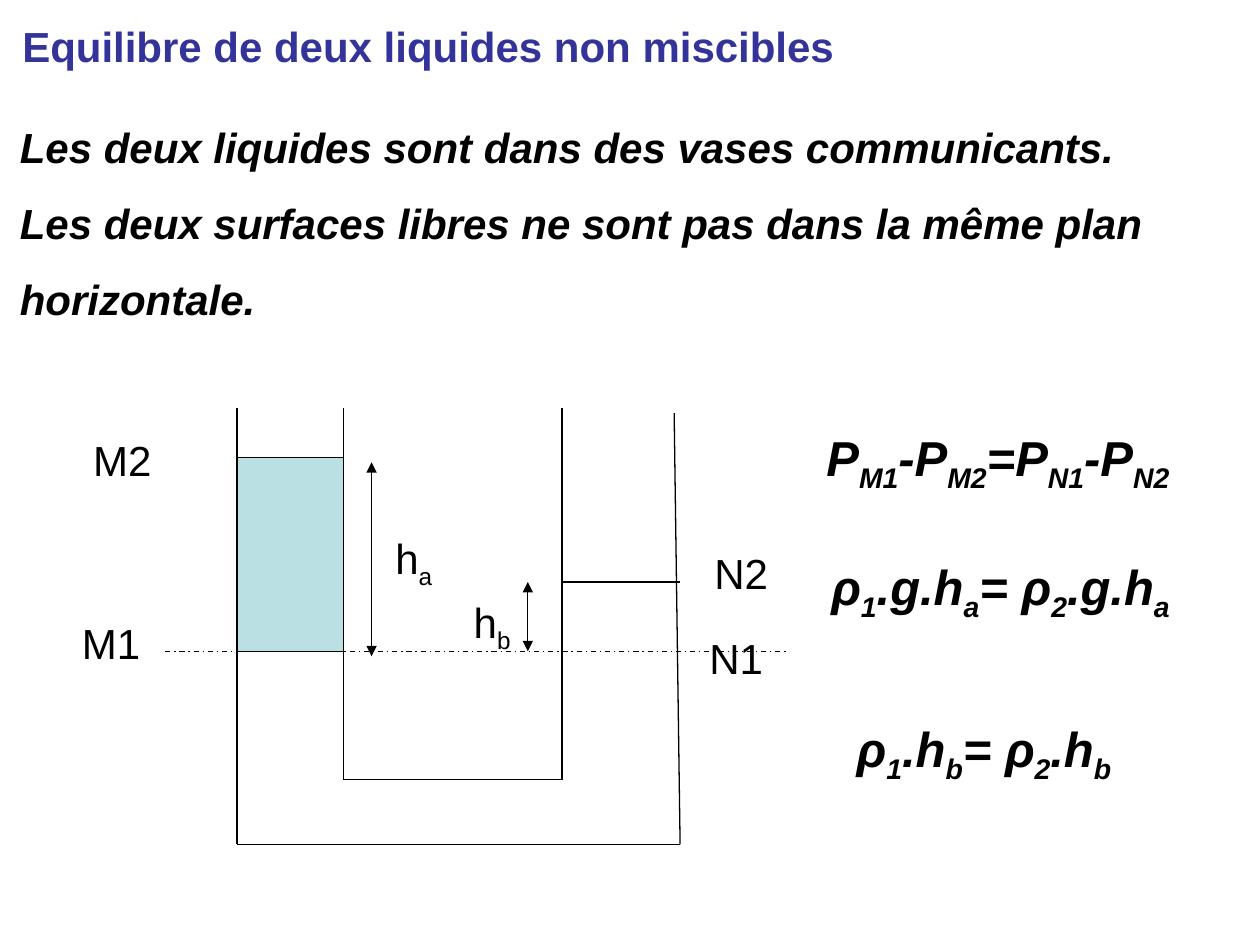
from dataclasses import dataclass

from lxml import etree
from pptx import Presentation
from pptx.dml.color import RGBColor
from pptx.enum.dml import MSO_LINE
from pptx.enum.shapes import MSO_CONNECTOR, MSO_SHAPE
from pptx.enum.text import MSO_ANCHOR
from pptx.oxml.ns import qn
from pptx.util import Cm, Pt

STRAIGHT = MSO_CONNECTOR.STRAIGHT
RECTANGLE = MSO_SHAPE.RECTANGLE
DASH_DOT = MSO_LINE.DASH_DOT
TOP, MIDDLE = MSO_ANCHOR.TOP, MSO_ANCHOR.MIDDLE

BLACK, TITLE_BLUE, LIQUID_BLUE = "000000", "333399", "BBE0E3"
FONT = "Arial"
LINE_WIDTH = Pt(0.75)

# Geometry of the U-shaped vessel, in centimetres
OUTER_LEFT, INNER_LEFT, INNER_RIGHT, OUTER_RIGHT = 4.78, 6.93, 11.33, 13.71
RIM, INNER_BOTTOM, OUTER_BOTTOM = 8.23, 15.72, 17.02
M2_LEVEL, N2_LEVEL, INTERFACE = 9.22, 11.73, 13.13


@dataclass
class Line:
    x1: float
    y1: float
    x2: float
    y2: float
    arrows: bool = False
    dashed: bool = False


@dataclass
class TextItem:
    """Text whose pieces between bars are alternately normal and subscript."""
    text: str
    left: float
    top: float
    width: float
    height: float
    size: int = 24
    color: str = BLACK
    bold: bool = False
    italic: bool = False
    anchor: MSO_ANCHOR = TOP
    spacing: float = 1.0


def formula(text: str, left: float, top: float, width: float) -> TextItem:
    return TextItem(text, left, top, width, 2.31, 28, BLACK, True, True, MIDDLE)


HEADINGS = [
    TextItem("Equilibre de deux liquides non miscibles", 0.2, 0.13, 17.3, 1.57,
             color=TITLE_BLUE, bold=True, anchor=MIDDLE),
    TextItem("Les deux liquides sont dans des vases communicants.\v"
             "Les deux surfaces libres ne sont pas dans la même plan horizontale.",
             0.15, 2.24, 25.4, 3.99, bold=True, italic=True, anchor=MIDDLE, spacing=1.5),
]

VESSEL_LINES = [
    Line(OUTER_LEFT, RIM, OUTER_LEFT, OUTER_BOTTOM),
    Line(INNER_LEFT, RIM, INNER_LEFT, INNER_BOTTOM),
    Line(INNER_RIGHT, RIM, INNER_RIGHT, INNER_BOTTOM),
    Line(13.59, 8.33, OUTER_RIGHT, OUTER_BOTTOM),
    Line(INNER_LEFT, INNER_BOTTOM, INNER_RIGHT, INNER_BOTTOM),
    Line(OUTER_LEFT, OUTER_BOTTOM, OUTER_RIGHT, OUTER_BOTTOM),
    Line(4.9, M2_LEVEL, INNER_LEFT, M2_LEVEL),
    Line(4.9, INTERFACE, INNER_LEFT, INTERFACE),
    Line(INNER_RIGHT, N2_LEVEL, OUTER_RIGHT, N2_LEVEL),
    Line(7.49, 9.32, 7.49, 13.23, arrows=True),
    Line(10.64, N2_LEVEL, 10.64, INTERFACE, arrows=True),
]
REFERENCE_LINE = Line(3.33, INTERFACE, 15.85, INTERFACE, dashed=True)

LABELS = [
    TextItem("M2", 1.63, 8.64, 1.71, 2.31),
    TextItem("M1", 1.4, 12.32, 1.71, 2.31),
    TextItem("N2", 14.15, 10.92, 1.71, 2.31),
    TextItem("N1", 14.05, 12.62, 1.71, 2.31),
    TextItem("h|a", 7.72, 10.62, 1.47, 1.3),
    TextItem("h|b", 9.3, 11.91, 1.7, 1.3),
]

FORMULAS = [
    formula("P|M1|-P|M2|=P|N1|-P|N2", 16.41, 8.13, 8.99),
    formula("ρ|1|.g.h|a|= ρ|2|.g.h|a", 16.51, 10.74, 7.65),
    formula("ρ|1|.h|b|= ρ|2|.h|b", 17.02, 14.0, 6.96),
]


def rgb(value: str) -> RGBColor:
    return RGBColor.from_string(value)


def add_text(slide, item: TextItem) -> None:
    box = slide.shapes.add_textbox(Cm(item.left), Cm(item.top), Cm(item.width), Cm(item.height))
    frame = box.text_frame
    frame.word_wrap = True
    frame.vertical_anchor = item.anchor
    paragraph = frame.paragraphs[0]
    paragraph.line_spacing = item.spacing
    pieces = item.text.split("|")
    if len(pieces) == 1:
        paragraph.text = item.text
    else:
        for index, piece in enumerate(pieces):
            run = paragraph.add_run()
            run.text = piece
            if index % 2:
                run._r.get_or_add_rPr().set("baseline", "-25000")
    for run in paragraph.runs:
        font = run.font
        font.name, font.size = FONT, Pt(item.size)
        font.bold, font.italic = item.bold, item.italic
        font.color.rgb = rgb(item.color)


def add_line(slide, line: Line) -> None:
    connector = slide.shapes.add_connector(
        STRAIGHT, Cm(line.x1), Cm(line.y1), Cm(line.x2), Cm(line.y2))
    connector.line.color.rgb = rgb(BLACK)
    connector.line.width = LINE_WIDTH
    if line.dashed:
        connector.line.dash_style = DASH_DOT
    properties = connector._element.spPr
    if line.arrows:
        outline = properties.find(qn("a:ln"))
        for end in ("a:headEnd", "a:tailEnd"):
            etree.SubElement(outline, qn(end), type="triangle")
    etree.SubElement(properties, qn("a:effectLst"))


def add_liquid(slide) -> None:
    liquid = slide.shapes.add_shape(
        RECTANGLE, Cm(OUTER_LEFT), Cm(M2_LEVEL),
        Cm(INNER_LEFT - OUTER_LEFT), Cm(INTERFACE - M2_LEVEL))
    liquid.shadow.inherit = False
    liquid.fill.solid()
    liquid.fill.fore_color.rgb = rgb(LIQUID_BLUE)
    liquid.line.color.rgb = rgb(BLACK)
    liquid.line.width = LINE_WIDTH


def main() -> None:
    presentation = Presentation()
    presentation.slide_width, presentation.slide_height = Cm(25.4), Cm(19.05)
    slide = presentation.slides.add_slide(presentation.slide_layouts[6])
    for heading in HEADINGS:
        add_text(slide, heading)
    for line in VESSEL_LINES:
        add_line(slide, line)
    for label in LABELS:
        add_text(slide, label)
    add_liquid(slide)
    add_line(slide, REFERENCE_LINE)
    for item in FORMULAS:
        add_text(slide, item)
    presentation.save("out.pptx")


if __name__ == "__main__":
    main()
